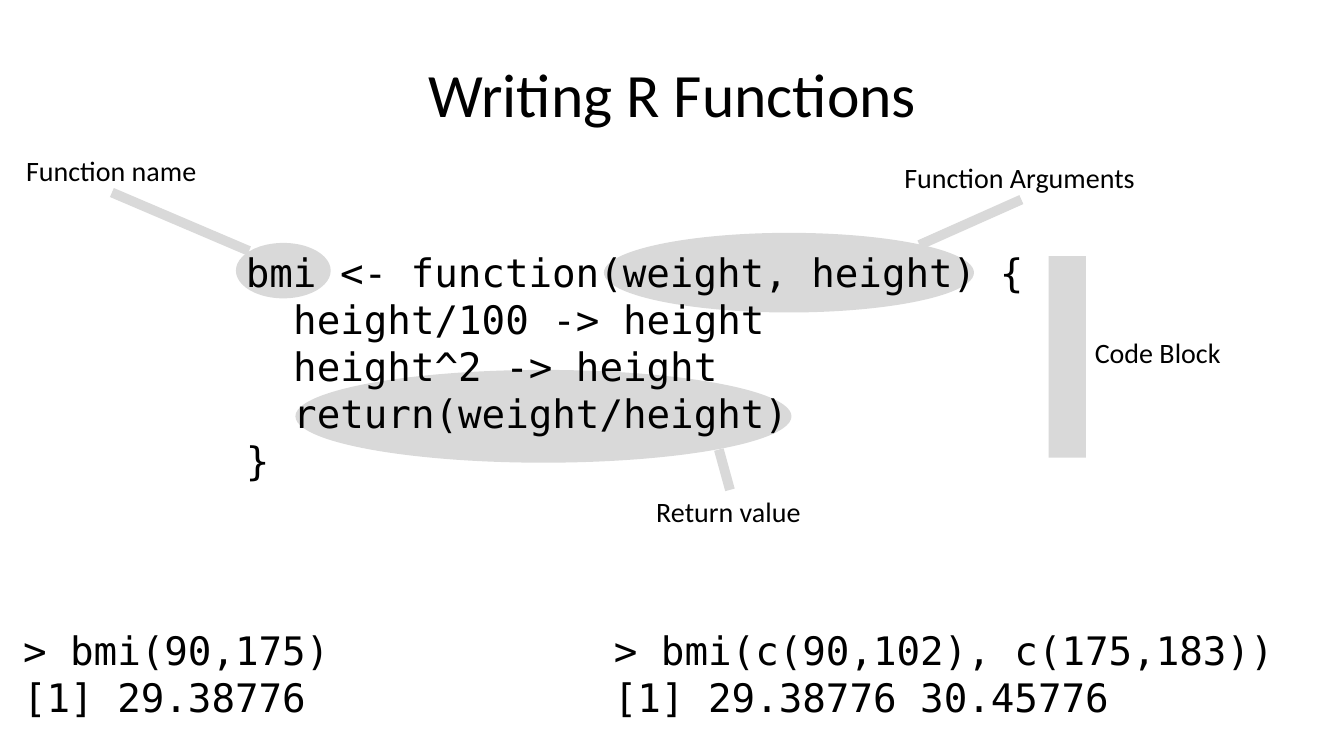
from dataclasses import dataclass

from lxml.etree import SubElement
from pptx import Presentation
from pptx.dml.color import RGBColor
from pptx.enum.shapes import MSO_CONNECTOR, MSO_SHAPE
from pptx.enum.text import MSO_ANCHOR, MSO_AUTO_SIZE, PP_ALIGN
from pptx.oxml.ns import qn
from pptx.util import Inches, Pt


@dataclass(frozen=True)
class Theme:
    ink: RGBColor = RGBColor(0x00, 0x00, 0x00)
    highlight: RGBColor = RGBColor(0xD9, 0xD9, 0xD9)
    body_font: str = "Calibri"
    code_font: str = "DejaVu Sans Mono"
    title_size: Pt = Pt(44)
    code_size: Pt = Pt(28)
    label_size: Pt = Pt(20)
    pointer_width: Pt = Pt(7)
    code_indent: Inches = Inches(0.47)


THEME = Theme()

BMI_FUNCTION = [
    (0, "bmi <- function(weight, height) {"),
    (1, "height/100 -> height"),
    (1, "height^2 -> height"),
    (1, "return(weight/height)"),
    (0, "}"),
]
SINGLE_CALL = [(0, "> bmi(90,175)"), (0, "[1] 29.38776")]
VECTOR_CALL = [(0, "> bmi(c(90,102), c(175,183))"), (0, "[1] 29.38776 30.45776")]


def inches(values):
    return [Inches(v) for v in values]


def format_runs(p, font, size):
    for r in p.runs:
        r.font.name = font
        r.font.size = size
        r.font.color.rgb = THEME.ink


def add_title(s, text):
    sp = s.shapes.title
    sp.left, sp.top, sp.width, sp.height = inches((0.67, 0.3, 12, 1.25))
    tf = sp.text_frame
    tf.text = text
    tf.vertical_anchor = MSO_ANCHOR.MIDDLE
    p = tf.paragraphs[0]
    p.alignment = PP_ALIGN.CENTER
    format_runs(p, THEME.body_font, THEME.title_size)


def add_text_frame(shapes, box, text, wrap):
    tf = shapes.add_textbox(*inches(box)).text_frame
    tf.text = text
    tf.word_wrap = wrap
    tf.auto_size = MSO_AUTO_SIZE.SHAPE_TO_FIT_TEXT
    return tf


def add_code(s, box, lines):
    tf = add_text_frame(s.shapes, box, "\n".join(text for _, text in lines), True)
    for p, (level, _) in zip(tf.paragraphs, lines):
        if level:
            p._p.get_or_add_pPr().set("marL", str(level * THEME.code_indent))
        format_runs(p, THEME.code_font, THEME.code_size)


def add_highlight(shapes, kind, box):
    sp = shapes.add_shape(kind, *inches(box))
    sp.shadow.inherit = False
    sp.fill.solid()
    sp.fill.fore_color.rgb = THEME.highlight
    sp.line.fill.background()


def add_pointer(shapes, start, end):
    line = shapes.add_connector(MSO_CONNECTOR.STRAIGHT, *inches(start + end))
    line.line.color.rgb = THEME.highlight
    line.line.width = THEME.pointer_width
    SubElement(line._element.spPr, qn("a:effectLst"))


def add_callout(s, text, label_box, kind, highlight_box, pointer=None):
    shapes = s.shapes.add_group_shape().shapes
    tf = add_text_frame(shapes, label_box, text, False)
    format_runs(tf.paragraphs[0], THEME.body_font, THEME.label_size)
    add_highlight(shapes, kind, highlight_box)
    if pointer:
        add_pointer(shapes, *pointer)


def main():
    prs = Presentation()
    prs.slide_width, prs.slide_height = Inches(13.33), Inches(7.5)
    s = prs.slides.add_slide(prs.slide_layouts.get_by_name("Title Only"))

    add_callout(s, "Return value", (6.41, 4.86, 1.65, 0.44),
                MSO_SHAPE.OVAL, (2.93, 3.67, 4.92, 0.92),
                ((7.13, 4.46), (7.24, 4.86)))
    add_callout(s, "Function Arguments", (8.87, 1.54, 2.51, 0.44),
                MSO_SHAPE.OVAL, (5.99, 2.31, 3.67, 0.79),
                ((9.12, 2.43), (10.13, 1.98)))
    add_callout(s, "Function name", (0.16, 1.47, 1.91, 0.44),
                MSO_SHAPE.OVAL, (2.34, 2.41, 0.94, 0.55),
                ((2.47, 2.49), (1.11, 1.91)))
    add_title(s, "Writing R Functions")
    add_code(s, (2.34, 2.41, 8.66, 2.46), BMI_FUNCTION)
    add_code(s, (0.13, 6.16, 4.02, 1.04), SINGLE_CALL)
    add_code(s, (5.99, 6.16, 7.22, 1.04), VECTOR_CALL)
    add_callout(s, "Code Block", (10.76, 3.28, 1.46, 0.44),
                MSO_SHAPE.RECTANGLE, (10.4, 2.54, 0.37, 2))

    prs.save("out.pptx")


if __name__ == "__main__":
    main()
